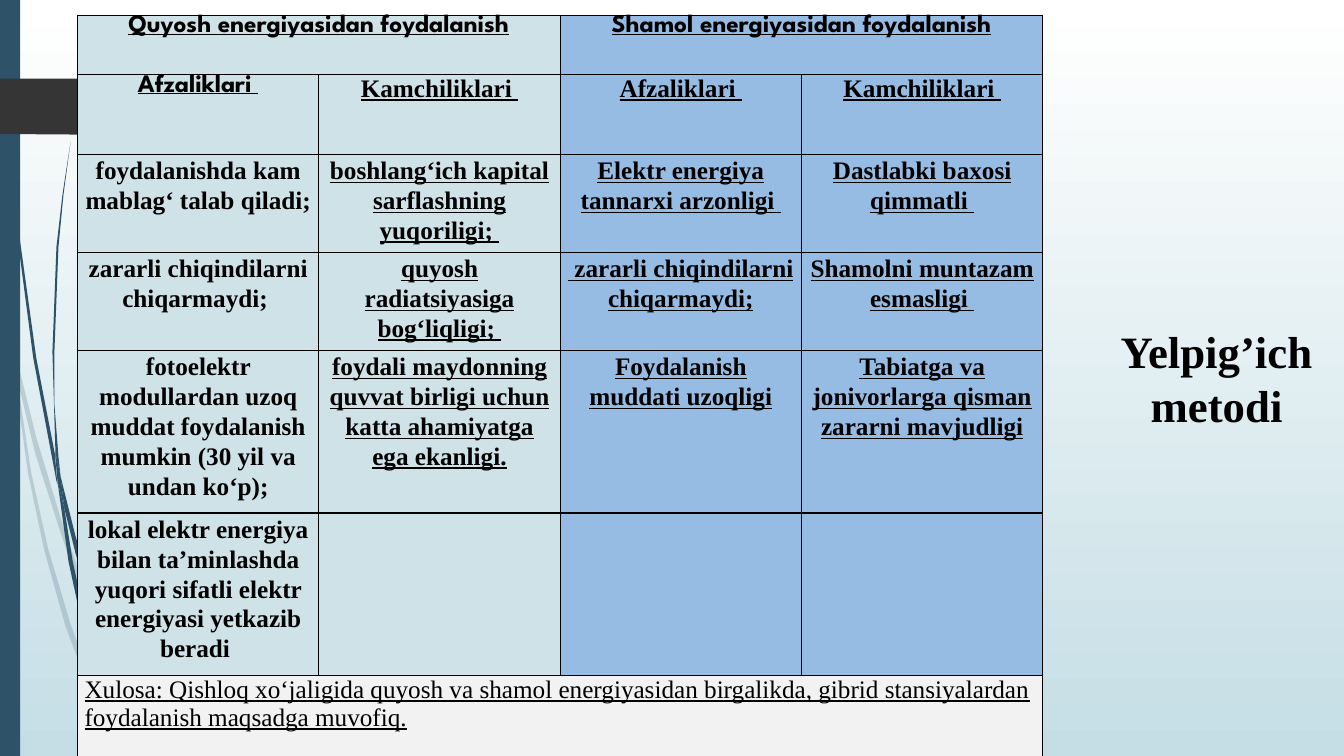
from dataclasses import dataclass

from pptx import Presentation
from pptx.dml.color import RGBColor
from pptx.enum.shapes import MSO_SHAPE
from pptx.enum.text import MSO_ANCHOR, MSO_AUTO_SIZE, PP_ALIGN
from pptx.oxml import parse_xml
from pptx.oxml.ns import nsdecls, qn
from pptx.util import Pt


@dataclass(frozen=True)
class Theme:
    ink: str = "000000"
    accent: str = "2E5369"
    tag: str = "353535"
    sky_top: str = "FFFFFF"
    sky_bottom: str = "C5DEE5"
    solar: str = "CFE2E7"
    wind: str = "97BCE4"
    summary: str = "F2F2F2"
    body_font: str = "Times New Roman"
    heading_font: str = "League Spartan"
    body_size: float = 18
    title_size: float = 32
    border: float = 1
    faint: int = 20  # opacity in percent


# Strand outlines, on a grid of 0.72 points
GRID = Pt(0.72)
FAINT_STRANDS = [
    [(11, 350), (9, 322), (0, 282), (0, 299), (10, 344)],
    [(58, 522), (84, 599), (85, 586), (62, 520), (36, 434), (14, 345), (17, 376), (35, 450)],
    [(92, 607), (88, 596), (88, 610), (123, 694), (150, 751), (155, 751), (127, 692)],
    [(119, 751), (124, 751), (105, 711)],
    [(93, 683), (70, 619), (48, 545), (31, 469), (17, 376), (11, 350), (28, 470),
     (44, 546), (65, 621), (92, 693), (101, 714), (99, 707)],
    [(101, 714), (114, 751), (119, 751)],
    [(96, 692), (93, 683), (99, 707), (101, 714), (119, 751), (105, 711)],
]
SOLID_STRANDS = [
    [(7, 110), (17, 233), (33, 355), (56, 477), (57, 481), (55, 457), (55, 453), (36, 355),
     (19, 232), (8, 109), (5, 48), (4, 0), (3, 0), (4, 48)],
    [(88, 592), (106, 645), (106, 631), (93, 590), (75, 532), (60, 472), (64, 505), (75, 549)],
    [(113, 649), (110, 641), (111, 656), (132, 708), (152, 749), (157, 749), (136, 706)],
    [(110, 691), (98, 657), (83, 607), (72, 556), (64, 505), (57, 477), (68, 557),
     (79, 608), (93, 659), (111, 708), (117, 722), (116, 717)],
    [(60, 472), (58, 453), (54, 401), (54, 349), (58, 245), (63, 193), (70, 141),
     (62, 193), (56, 245), (52, 349), (55, 449)],
    [(133, 749), (136, 749), (122, 719)],
    [(57, 477), (64, 505), (60, 472), (55, 449), (55, 453)],
    [(117, 722), (127, 749), (131, 749)],
    [(116, 706), (110, 691), (116, 717), (117, 722), (130, 749), (133, 749), (122, 719)],
]
TAG = [(173, 108), (148, 133), (146, 134), (136, 134), (0, 133), (0, 78), (146, 78),
       (148, 79), (173, 104)]

# Table wording
GROUPS = ["Quyosh energiyasidan foydalanish", "Shamol energiyasidan foydalanish"]
HEADINGS = ["Afzaliklari ", "Kamchiliklari "] * 2
ROWS = [
    ["foydalanishda kam mablag‘ talab qiladi; ",
     "boshlang‘ich kapital sarflashning yuqoriligi; ",
     "Elektr energiya tannarxi arzonligi ",
     "Dastlabki baxosi qimmatli "],
    ["zararli chiqindilarni chiqarmaydi; ",
     "quyosh radiatsiyasiga bog‘liqligi; ",
     " zararli chiqindilarni chiqarmaydi;",
     "Shamolni muntazam esmasligi "],
    ["fotoelektr modullardan uzoq muddat foydalanish mumkin (30 yil va undan ko‘p);",
     "foydali maydonning quvvat birligi uchun katta ahamiyatga ega ekanligi.",
     "Foydalanish muddati uzoqligi",
     "Tabiatga va jonivorlarga qisman zararni mavjudligi"],
    ["lokal elektr energiya bilan ta’minlashda yuqori sifatli elektr energiyasi yetkazib beradi ",
     "", "", ""],
]
SUMMARY = ("Xulosa: Qishloq xo‘jaligida quyosh va shamol energiyasidan birgalikda, "
           "gibrid stansiyalardan foydalanish maqsadga muvofiq.")
ROW_HEIGHTS = [42.5, 56.9, 67.7, 67.7, 112.3, 112.3, 61.2]
COLUMN_WIDTH = 172.4


class SlideBuilder:
    def __init__(self, slide, theme):
        self.slide = slide
        self.theme = theme

    def background(self):
        fill = self.slide.background.fill
        fill.gradient()
        fill.gradient_angle = 270
        colors = (self.theme.sky_top, self.theme.sky_bottom)
        for position, (stop, color) in enumerate(zip(fill.gradient_stops, colors)):
            stop.position = position
            stop.color.rgb = RGBColor.from_string(color)

    def paint(self, shape, color):
        shape.shadow.inherit = False
        shape.fill.solid()
        shape.fill.fore_color.rgb = RGBColor.from_string(color)
        shape.line.fill.background()

    def outline(self, points, color, opacity=100):
        builder = self.slide.shapes.build_freeform(*points[0], scale=GRID)
        builder.add_line_segments(points[1:], close=True)
        shape = builder.convert_to_shape()
        self.paint(shape, color)
        if opacity < 100:
            alpha = parse_xml(f'<a:alpha {nsdecls("a")} val="{opacity * 1000}"/>')
            shape.element.spPr.find(qn("a:solidFill"))[0].append(alpha)

    def bar(self, left, top, width, height, color):
        shape = self.slide.shapes.add_shape(
            MSO_SHAPE.RECTANGLE, Pt(left), Pt(top), Pt(width), Pt(height))
        self.paint(shape, color)

    def style(self, paragraph, size, name, bold=True, underline=False):
        font = paragraph.font
        font.size, font.name = Pt(size), name
        font.bold, font.underline = bold, underline
        font.color.rgb = RGBColor.from_string(self.theme.ink)

    def title(self, text, left, top, width, height):
        shape = self.slide.shapes.title
        shape.left, shape.top, shape.width, shape.height = map(Pt, (left, top, width, height))
        frame = shape.text_frame
        frame.text = text
        frame.word_wrap = True
        frame.auto_size = MSO_AUTO_SIZE.SHAPE_TO_FIT_TEXT
        frame.vertical_anchor = MSO_ANCHOR.TOP
        paragraph = frame.paragraphs[0]
        paragraph.alignment = PP_ALIGN.CENTER
        self.style(paragraph, self.theme.title_size, self.theme.body_font)

    def table(self, left, top, row_heights, column_width, columns):
        table = self.slide.shapes.add_table(
            len(row_heights), columns, Pt(left), Pt(top),
            Pt(column_width * columns), Pt(sum(row_heights))).table
        table.first_row = table.horz_banding = False
        for row, height in zip(table.rows, row_heights):
            row.height = Pt(height)
        for cell in table.iter_cells():
            self.borders(cell)
        return table

    def borders(self, cell):
        properties = cell._tc.get_or_add_tcPr()
        for side in ("lnL", "lnR", "lnT", "lnB"):
            properties.append(parse_xml(
                f'<a:{side} {nsdecls("a")} w="{Pt(self.theme.border)}"><a:solidFill>'
                f'<a:srgbClr val="{self.theme.ink}"/></a:solidFill></a:{side}>'))

    def cell(self, cell, text, color, alignment=PP_ALIGN.CENTER, spaced=False, **font):
        cell.fill.solid()
        cell.fill.fore_color.rgb = RGBColor.from_string(color)
        cell.margin_left = cell.margin_right = Pt(5)
        cell.margin_top, cell.margin_bottom = Pt(0.7 if spaced else 0), Pt(0)
        cell.text = text
        paragraph = cell.text_frame.paragraphs[0]
        paragraph.alignment = alignment
        if spaced:
            paragraph.line_spacing = 1.07
            paragraph.space_after = Pt(8)
        style = {"name": self.theme.body_font, "underline": True, **font}
        self.style(paragraph, self.theme.body_size, **style)


def main():
    presentation = Presentation()
    presentation.slide_width, presentation.slide_height = Pt(960), Pt(540)
    theme = Theme()
    builder = SlideBuilder(presentation.slides.add_slide(presentation.slide_layouts[5]), theme)

    # Backdrop
    builder.background()
    for strand in FAINT_STRANDS:
        builder.outline(strand, theme.accent, theme.faint)
    for strand in SOLID_STRANDS:
        builder.outline(strand, theme.accent)
    builder.bar(0, 0, 14.4, 540, theme.accent)
    builder.outline(TAG, theme.tag)

    # Comparison table
    table = builder.table(55.4, 10.8, ROW_HEIGHTS, COLUMN_WIDTH, len(HEADINGS))
    fills = [theme.solar, theme.solar, theme.wind, theme.wind]
    for index, group in enumerate(GROUPS):
        first = table.cell(0, 2 * index)
        first.merge(table.cell(0, 2 * index + 1))
        builder.cell(first, group, fills[2 * index], name=theme.heading_font)
    for column, (heading, fill) in enumerate(zip(HEADINGS, fills)):
        name = theme.heading_font if column == 0 else theme.body_font
        builder.cell(table.cell(1, column), heading, fill, name=name)
        for row, texts in enumerate(ROWS, start=2):
            builder.cell(table.cell(row, column), texts[column], fill,
                         spaced=True, underline=column > 0)

    # Conclusion
    last = len(ROW_HEIGHTS) - 1
    table.cell(last, 0).merge(table.cell(last, len(HEADINGS) - 1))
    builder.cell(table.cell(last, 0), SUMMARY, theme.summary, PP_ALIGN.LEFT, bold=False)

    # Title
    builder.title("Yelpig’ich metodi", 778.3, 227.5, 181.4, 85)

    presentation.save("out.pptx")


if __name__ == "__main__":
    main()
